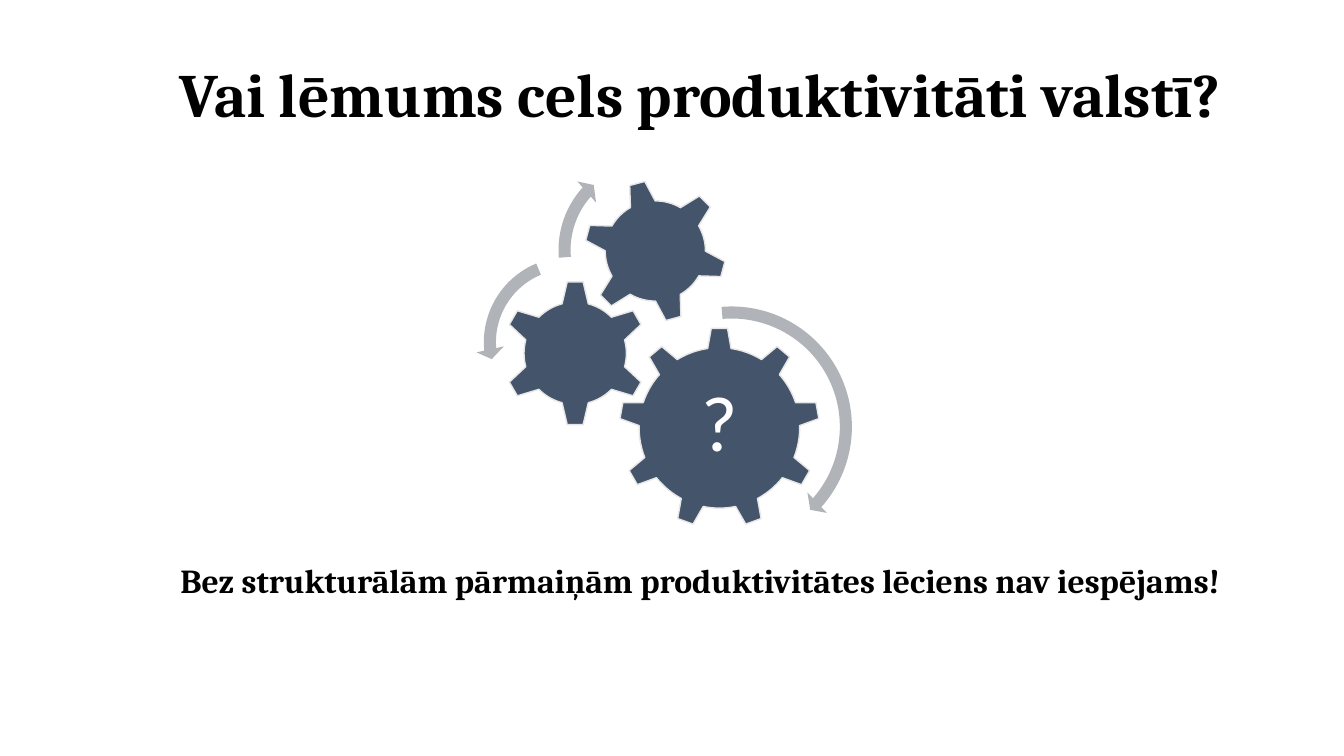
from pptx import Presentation
from pptx.dml.color import RGBColor as Rgb
from pptx.enum.shapes import MSO_SHAPE as Shape
from pptx.enum.text import MSO_ANCHOR as Anchor, PP_ALIGN as Align
from pptx.util import Inches, Pt

COLORS = {"gear": "44546A", "edge": "E7E6E6", "arrow": "B0B4B9",
          "ink": "000000", "white": "FFFFFF"}


class Deck:
    def __init__(self, wide, high):
        self.prs = Presentation()
        self.prs.slide_width = Inches(wide)
        self.prs.slide_height = Inches(high)
        self.slide = self.prs.slides.add_slide(self.prs.slide_layouts[6])
        self.group = None

    def color(self, name):
        return Rgb.from_string(COLORS[name])

    def start(self):
        self.group = self.slide.shapes.add_group_shape()

    def end(self):
        self.group = None

    def home(self):
        return (self.group or self.slide).shapes

    def shape(self, kind, left, top, size, fill):
        item = self.home().add_shape(
            kind, Inches(left), Inches(top), Inches(size), Inches(size))
        item.shadow.inherit = False
        item.fill.solid()
        item.fill.fore_color.rgb = self.color(fill)
        return item

    def gear(self, kind, left, top, size, turn=0):
        item = self.shape(kind, left, top, size, "gear")
        item.line.color.rgb = self.color("edge")
        item.line.width = Pt(1)
        item.rotation = turn

    def arrow(self, kind, left, top, size, band, angles, head):
        item = self.shape(kind, left, top, size, "arrow")
        item.line.fill.background()
        values = [band / 100, *(angle * 0.6 for angle in angles), head / 100]
        for index, value in enumerate(values):
            item.adjustments[index] = value

    def text(self, words, box, size, face="Cambria", ink="ink", bold=True,
             anchor=Anchor.TOP, space=1.0, inset=None):
        frame = self.home().add_textbox(*map(Inches, box)).text_frame
        frame.word_wrap = True
        frame.vertical_anchor = anchor
        if inset is not None:
            frame.margin_left = frame.margin_right = Inches(inset)
            frame.margin_top = frame.margin_bottom = Inches(inset)
        frame.text = words
        line = frame.paragraphs[0]
        line.alignment = Align.CENTER
        line.line_spacing = space
        font = line.runs[0].font
        font.name, font.size, font.bold = face, Pt(size), bold
        font.color.rgb = self.color(ink)


def main():
    deck = Deck(13.33, 7.5)
    deck.text("Vai lēmums cels produktivitāti valstī?",
              (0.76, 0.53, 12.37, 0.82), 44, anchor=Anchor.BOTTOM, space=0.9)
    deck.start()
    deck.gear(Shape.GEAR_9, 6.14, 3.25, 1.99)
    deck.text("?", (6.54, 3.72, 1.19, 1.02), 56, "Calibri", "white", False,
              Anchor.MIDDLE, 0.9, 0.08)
    deck.gear(Shape.GEAR_6, 4.98, 2.78, 1.45)
    deck.gear(Shape.GEAR_6, 5.79, 1.78, 1.42, 345)
    deck.arrow(Shape.CIRCULAR_ARROW, 5.98, 2.96, 2.55,
               4.7, (4.98, 41.51, 265.28), 5.5)
    deck.arrow(Shape.LEFT_CIRCULAR_ARROW, 4.72, 2.47, 1.85,
               6.5, (7.17, 174.82, 247.3), 7.5)
    deck.arrow(Shape.CIRCULAR_ARROW, 5.46, 1.48, 2,
               6, (6.57, 221.9, 175.14), 7)
    deck.end()
    deck.text("Bez strukturālām pārmaiņām produktivitātes lēciens nav iespējams! ",
              (1.22, 5.51, 11.52, 0.81), 24)
    deck.prs.save("out.pptx")


if __name__ == "__main__":
    main()
